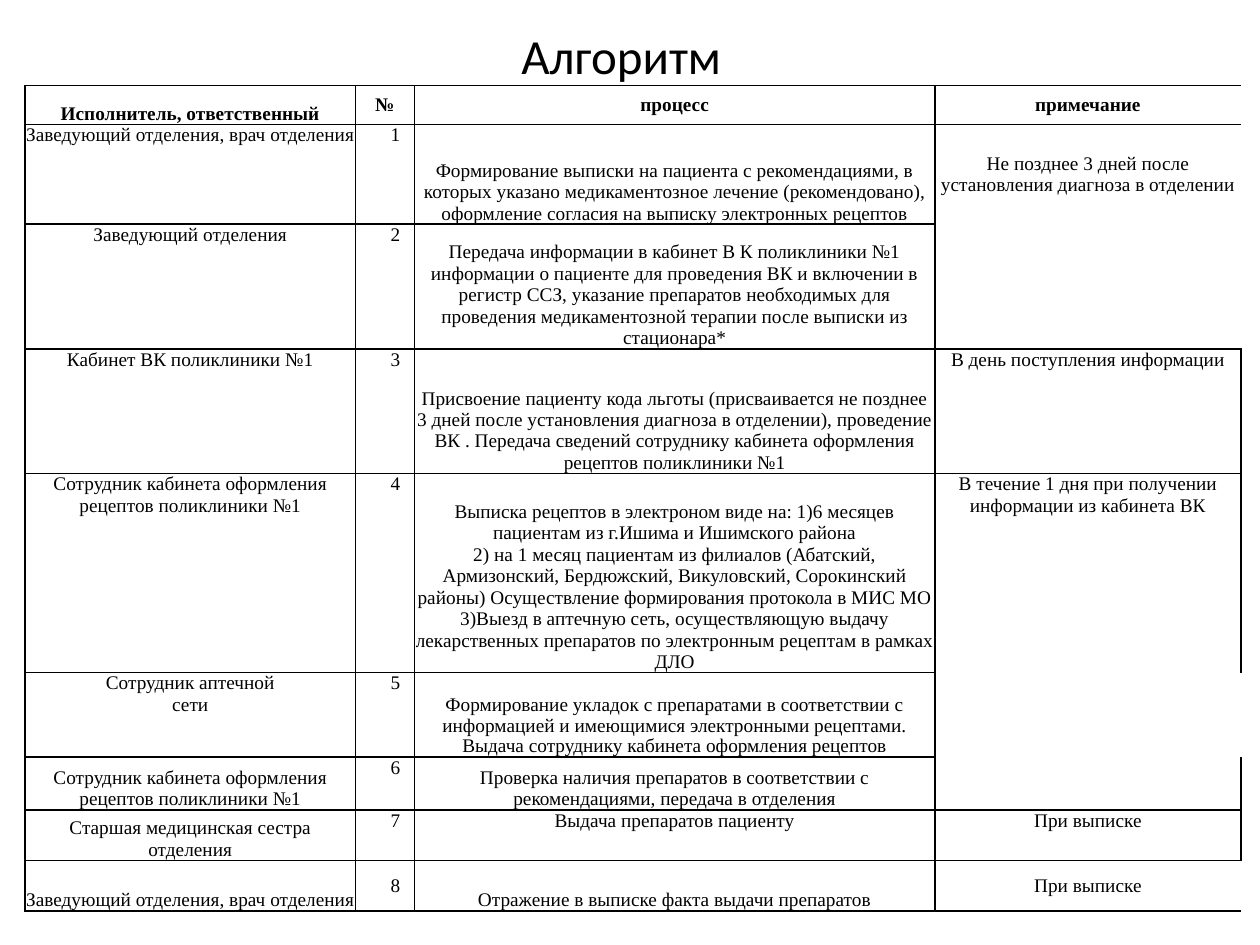
from pptx import Presentation
from pptx.util import Inches as In, Pt
from pptx.dml.color import RGBColor
from pptx.enum.text import PP_ALIGN as Al, MSO_ANCHOR as An
from pptx.oxml import parse_xml
from pptx.oxml.ns import nsdecls

TITLE = "Алгоритм"
INK, PAPER = "000000", "FFFFFF"
COLS = [2.62, 0.47, 4.13, 2.43]
CHIEF = "Заведующий отделения, врач отделения"
DESK = "Сотрудник кабинета оформления рецептов поликлиники №1"
ROWS = [
    (0.31, "bmmm", "LTB", ["Исполнитель, ответственный", "№", "процесс", "примечание"]),
    (0.79, "ttbm", "LT", [
        CHIEF, "1",
        "Формирование выписки на пациента с рекомендациями, в которых указано "
        "медикаментозное лечение (рекомендовано), оформление согласия на выписку "
        "электронных рецептов",
        "Не позднее 3 дней после установления диагноза в отделении"]),
    (0.99, "ttbt", "LB", [
        "Заведующий отделения", "2",
        "Передача информации в кабинет В К поликлиники №1 информации о пациенте для "
        "проведения ВК и включении в регистр ССЗ, указание препаратов необходимых для "
        "проведения медикаментозной терапии после выписки из стационара*", ""]),
    (0.99, "ttbt", "LRTB", [
        "Кабинет ВК поликлиники №1", "3",
        "Присвоение пациенту кода льготы (присваивается не позднее 3 дней после "
        "установления диагноза в отделении), проведение ВК . Передача сведений "
        "сотруднику кабинета оформления рецептов поликлиники №1",
        "В день поступления информации"]),
    (1.58, "ttbt", "LRT", [
        DESK, "4",
        "Выписка рецептов в электроном виде на: 1)6 месяцев пациентам из г.Ишима и "
        "Ишимского района\n2) на 1 месяц пациентам из филиалов (Абатский, Армизонский, "
        "Бердюжский, Викуловский, Сорокинский районы) Осуществление формирования "
        "протокола в МИС МО 3)Выезд в аптечную сеть, осуществляющую выдачу "
        "лекарственных препаратов по электронным рецептам в рамках ДЛО",
        "В течение 1 дня при получении информации из кабинета ВК"]),
    (0.67, "ttbt", "L", [
        "Сотрудник аптечной\nсети", "5",
        "Формирование укладок с препаратами в соответствии с информацией и имеющимися "
        "электронными рецептами. Выдача сотруднику кабинета оформления рецептов", ""]),
    (0.42, "btbt", "LRB", [
        DESK, "6",
        "Проверка наличия препаратов в соответствии с рекомендациями, передача в "
        "отделения", ""]),
    (0.4, "bttt", "LRTB", [
        "Старшая медицинская сестра отделения", "7", "Выдача препаратов пациенту",
        "При выписке"]),
    (0.4, "bmbm", "LTB", [
        CHIEF, "8", "Отражение в выписке факта выдачи препаратов", "При выписке"]),
]
SPACING = {(0, 0): 0.95, (5, 2): 0.97}
ANCHOR = {"t": An.TOP, "m": An.MIDDLE, "b": An.BOTTOM}


def tint(hue):
    return RGBColor.from_string(hue)


def style(font, name, size, bold=False):
    font.name, font.size, font.bold = name, Pt(size), bold
    font.color.rgb = tint(INK)


def edge(cell, sides):
    props = cell._tc.get_or_add_tcPr()
    for spot, side in enumerate("LRTB"):
        fill = (f'<a:solidFill><a:srgbClr val="{INK}"/></a:solidFill>'
                if side in sides else "<a:noFill/>")
        props.insert(spot, parse_xml(
            f'<a:ln{side} {nsdecls("a")} w="{Pt(1)}">{fill}</a:ln{side}>'))


def write(cell, text, anchor, row, col):
    cell.margin_left = cell.margin_right = cell.margin_top = cell.margin_bottom = 0
    cell.vertical_anchor = ANCHOR[anchor]
    cell.fill.solid()
    cell.fill.fore_color.rgb = tint(PAPER)
    cell.text_frame.text = text
    for para in cell.text_frame.paragraphs:
        para.alignment = Al.CENTER
        para.line_spacing = SPACING.get((row, col))
        if row and col == 1:
            para.alignment = Al.JUSTIFY
            para._p.get_or_add_pPr().set("indent", str(In(0.28)))
        for run in para.runs:
            style(run.font, "Times New Roman", 11, row == 0)


deck = Presentation()
deck.slide_width, deck.slide_height = In(10), In(7.5)
slide = deck.slides.add_slide(deck.slide_layouts[6])

high = sum(row[0] for row in ROWS)
table = slide.shapes.add_table(len(ROWS), len(COLS), In(0.2), In(0.68),
                               In(sum(COLS)), In(high)).table
table.first_row = table.horz_banding = False
for col, width in enumerate(COLS):
    table.columns[col].width = In(width)
for row, (height, anchors, sides, texts) in enumerate(ROWS):
    table.rows[row].height = In(height)
    for col, text in enumerate(texts):
        cell = table.cell(row, col)
        write(cell, text, anchors[col], row, col)
        edge(cell, sides if col == 3 else "LRTB")

head = slide.shapes.add_textbox(In(0.43), In(0.13), In(9), In(0.61)).text_frame
head.word_wrap = True
head.vertical_anchor = An.MIDDLE
head.text = TITLE
head.paragraphs[0].alignment = Al.CENTER
style(head.paragraphs[0].runs[0].font, "Calibri", 28)

deck.save("out.pptx")
